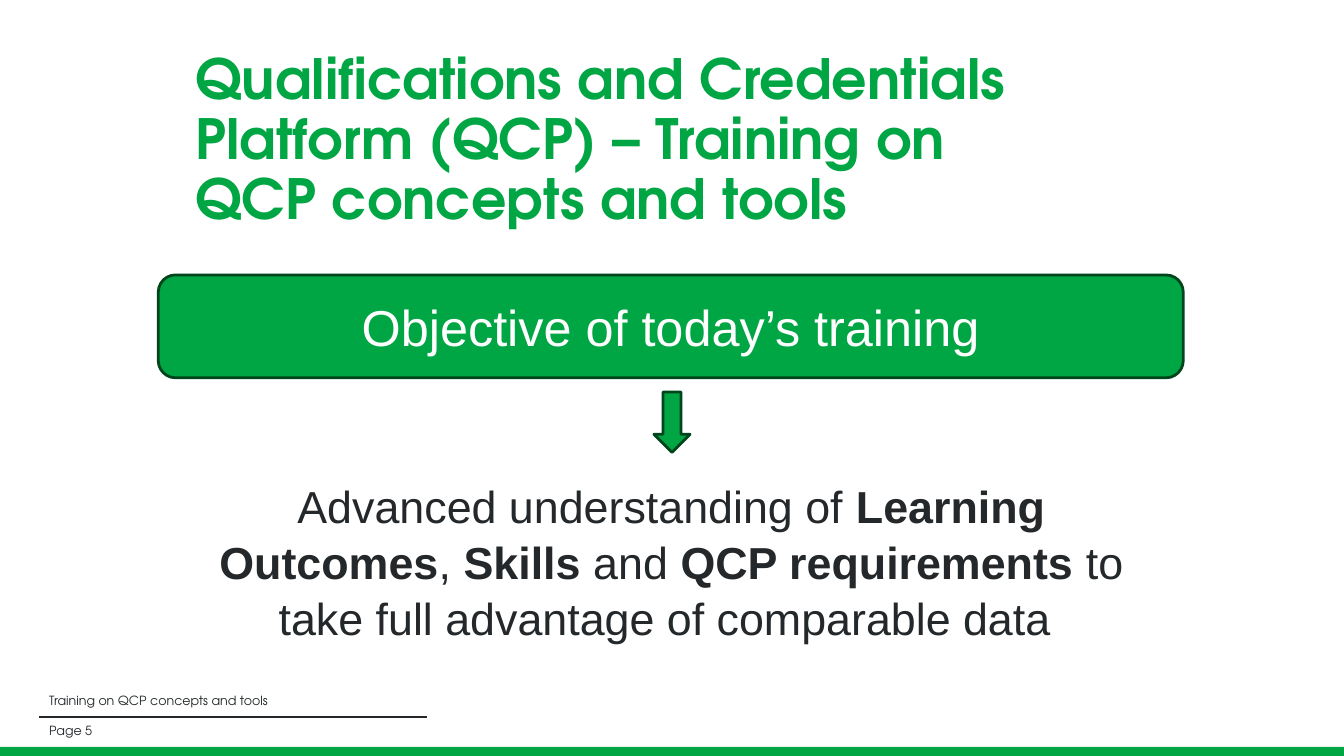
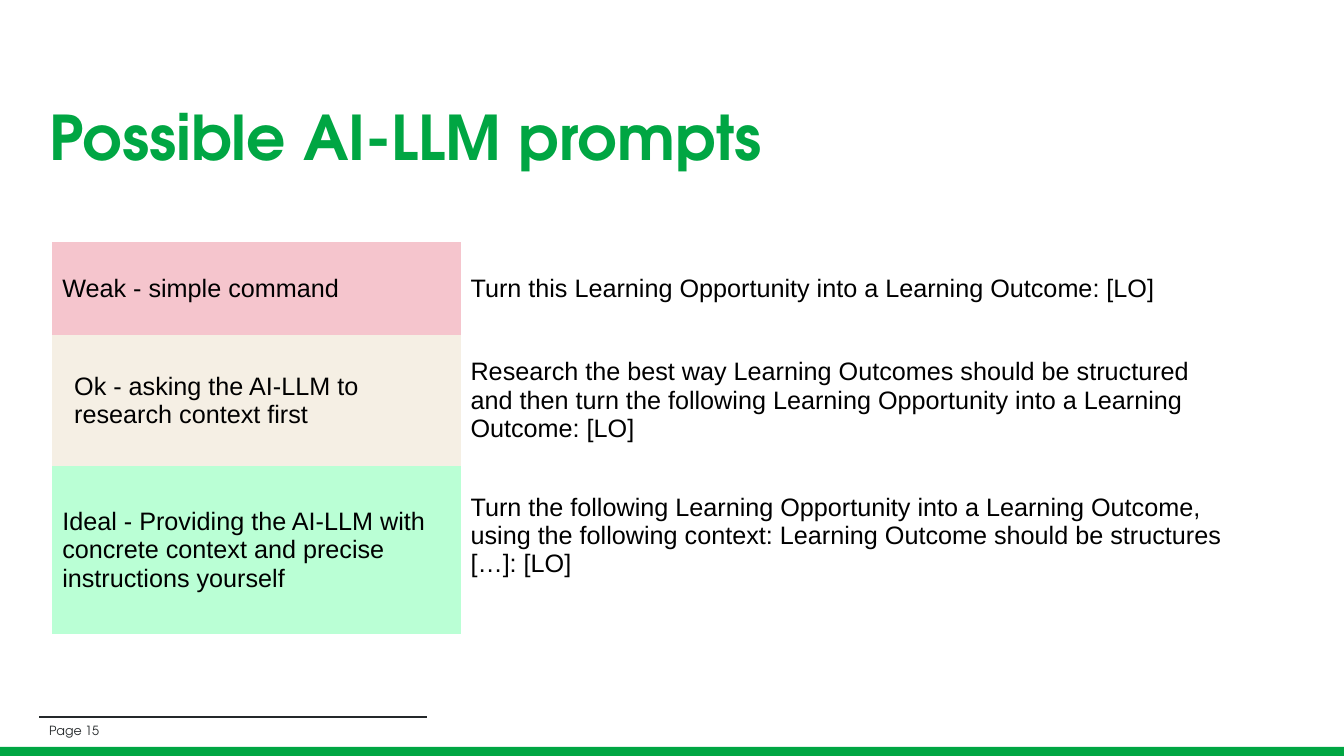
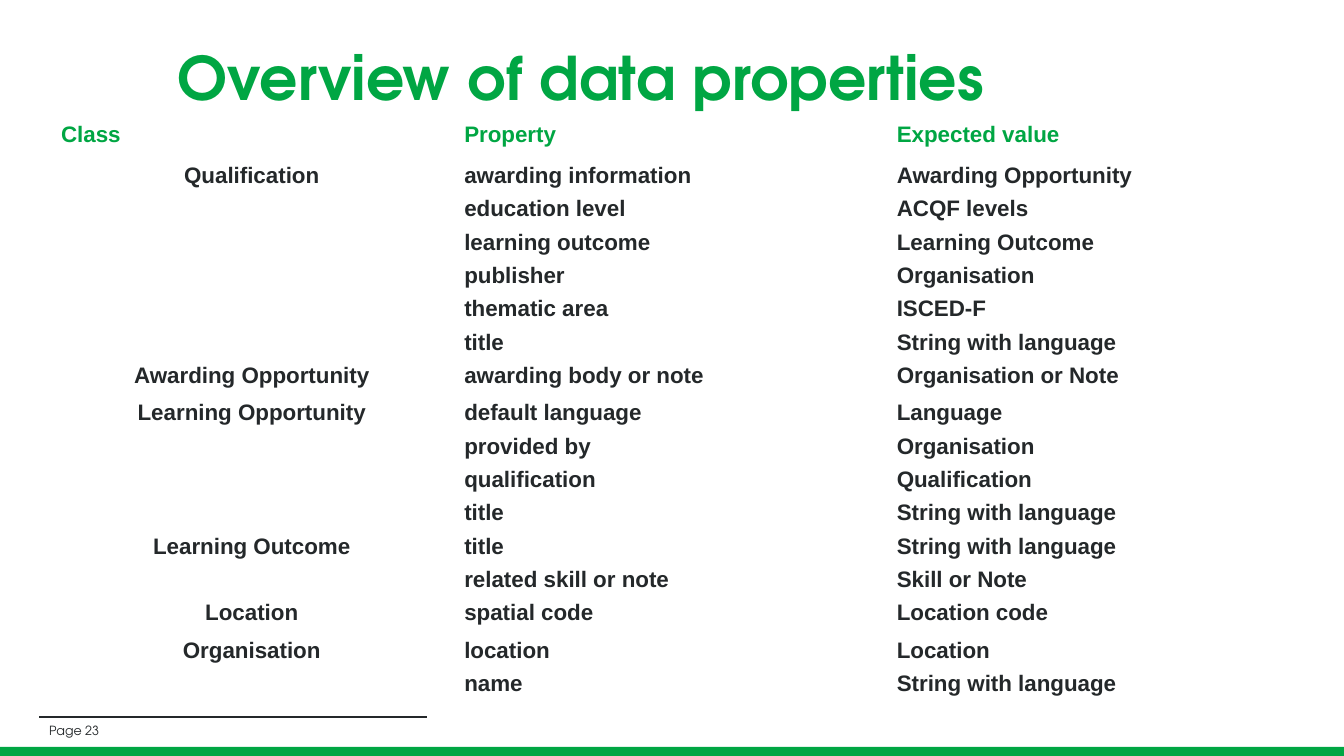
from pptx import Presentation
from pptx.dml.color import RGBColor
from pptx.enum.shapes import MSO_CONNECTOR, MSO_SHAPE
from pptx.enum.text import MSO_ANCHOR, MSO_AUTO_SIZE, PP_ALIGN
from pptx.oxml.ns import qn
from pptx.util import Cm, Pt
from lxml.etree import SubElement

GREEN = RGBColor(0x00, 0xA6, 0x43)
DARK = RGBColor(0x00, 0x46, 0x1C)
INK = RGBColor(0x24, 0x28, 0x2A)
WHITE = RGBColor(0xFF, 0xFF, 0xFF)
BLACK = RGBColor(0x00, 0x00, 0x00)
PINK = RGBColor(0xF5, 0xC5, 0xCD)
CREAM = RGBColor(0xF5, 0xEF, 0xE4)
MINT = RGBColor(0xBA, 0xFF, 0xD5)

HEAD, BODY = "TeX Gyre Adventor", "Arial"
PLAIN_GRID = "{2D5ABB26-0587-4C30-8999-92F81FD0307C}"
WIDTH, HEIGHT = 33.87, 19.05
LEFT, MIDDLE, FULL = PP_ALIGN.LEFT, PP_ALIGN.CENTER, PP_ALIGN.JUSTIFY

NOTE = {"name": HEAD, "size": Pt(9), "color": INK}
GOAL = {"name": BODY, "size": Pt(32), "color": INK}
BANNER = {"name": BODY, "size": Pt(36), "color": WHITE}
PROMPT = {"name": BODY, "size": Pt(18), "color": BLACK}
LABEL = {"name": BODY, "size": Pt(16), "color": GREEN, "bold": True}
ENTRY = {**LABEL, "color": INK}

# Title text, title box in cm, title size in points, page number
TRAINING = ("Qualifications and Credentials Platform (QCP) – "
            "Training on QCP concepts and tools",
            (4.67, 1.73, 22.02, 3.68), 39.6, 5)
PROMPTS = ("Possible AI-LLM prompts", (0.99, 1.7, 31.85, 3.68), 44, 15)
OVERVIEW = ("Overview of data properties", (4.22, 0.43, 28.55, 3.2), 42.9, 23)

# Text and whether it is bold
AIM = [
    ("Advanced understanding of ", False),
    ("Learning Outcomes", True),
    (", ", False),
    ("Skills", True),
    (" and ", False),
    ("QCP requirements ", True),
    ("to take full advantage of comparable data ", False),
]

# Row height, fill, rating, prompt, margin left of the rating, margin below the prompt
LEVELS = [
    (2.34, PINK, "Weak - simple command",
     "Turn this Learning Opportunity into a Learning Outcome: [LO]", 0.25, 0.13),
    (3.3, CREAM, "Ok - asking the AI-LLM to research context first",
     "Research the best way Learning Outcomes should be structured and then "
     "turn the following Learning Opportunity into a Learning Outcome: [LO]",
     0.55, 0.13),
    (4.24, MINT, "Ideal - Providing the AI-LLM with concrete context and "
     "precise instructions yourself",
     "Turn the following Learning Opportunity into a Learning Outcome, using "
     "the following context: Learning Outcome should be structures […]: [LO]",
     0.25, 0.84),
]

COLUMNS = ["Class", "Property", "Expected value"]
CLASSES = {
    "Qualification": [
        ("awarding information", "Awarding Opportunity"),
        ("education level", "ACQF levels"),
        ("learning outcome", "Learning Outcome"),
        ("publisher", "Organisation"),
        ("thematic area", "ISCED-F"),
        ("title", "String with language"),
    ],
    "Awarding Opportunity": [("awarding body or note", "Organisation or Note")],
    "Learning Opportunity": [
        ("default language", "Language"),
        ("provided by", "Organisation"),
        ("qualification", "Qualification"),
        ("title", "String with language"),
    ],
    "Learning Outcome": [
        ("title", "String with language"),
        ("related skill or note", "Skill or Note"),
    ],
    "Location": [("spatial code", "Location code")],
    "Organisation": [
        ("location", "Location"),
        ("name", "String with language"),
    ],
}


def cms(*values):
    return [Cm(value) for value in values]


def write(frame, parts, style, align=LEFT, lines=1.0):
    """Fill the first paragraph with (text, changes to the style) parts."""
    para = frame.paragraphs[0]
    para.alignment, para.line_spacing = align, lines
    for text, change in parts:
        run = para.add_run()
        run.text = text
        look = {**style, **change}
        run.font.color.rgb = look.pop("color")
        for name, value in look.items():
            setattr(run.font, name, value)


def set_frame(frame):
    form = {"word_wrap": True, "auto_size": MSO_AUTO_SIZE.NONE,
            "vertical_anchor": MSO_ANCHOR.MIDDLE}
    for name, value in form.items():
        setattr(frame, name, value)
    return frame


def add_text(slide, box, parts, style, **layout):
    frame = set_frame(slide.shapes.add_textbox(*cms(*box)).text_frame)
    write(frame, parts, style, **layout)


def add_shape(slide, kind, box, edge=None):
    shape = slide.shapes.add_shape(kind, *cms(*box))
    shape.shadow.inherit = False
    shape.fill.solid()
    shape.fill.fore_color.rgb = GREEN
    if edge is None:
        shape.line.fill.background()
    else:
        shape.line.color.rgb = edge
        shape.line.width = Pt(2)
    return shape


def brand(slide):
    """Draw the band and footer rule, then hand them to the slide's layout."""
    band = add_shape(slide, MSO_SHAPE.RECTANGLE,
                     (0, 18.82, WIDTH, HEIGHT - 18.82))
    rule = slide.shapes.add_connector(MSO_CONNECTOR.STRAIGHT,
                                      *cms(0.99, 18.06, 10.77, 18.06))
    rule.line.color.rgb = INK
    rule.line.width = Pt(1.5)
    SubElement(rule.element.spPr, qn("a:effectLst"))
    for part in (band, rule):
        slide.slide_layout.shapes.element.append(part.element)


def start(deck, title, box, size, page):
    slide = deck.slides.add_slide(deck.slide_layouts[5])
    head = slide.shapes.title
    head.left, head.top, head.width, head.height = cms(*box)
    style = {"name": HEAD, "size": Pt(size), "color": GREEN, "bold": True}
    write(set_frame(head.text_frame), [(title, {})], style, lines=0.9)
    add_text(slide, (0.99, 18.16, 10.31, 0.48), [(f"Page {page}", {})], NOTE)
    return slide


def add_grid(slide, left, top, widths, heights):
    frame = slide.shapes.add_table(
        len(heights), len(widths),
        *cms(left, top, sum(widths), sum(heights)))
    for style in frame.element.iter(qn("a:tableStyleId")):
        style.text = PLAIN_GRID
    table = frame.table
    table.first_row = table.horz_banding = False
    for column, width in zip(table.columns, widths):
        column.width = Cm(width)
    for row, height in zip(table.rows, heights):
        row.height = Cm(height)
    return table


def set_cell(cell, anchor, left, edge, base, fill=None):
    form = {"vertical_anchor": anchor, "margin_left": Cm(left),
            "margin_right": Cm(0.25), "margin_top": Cm(edge),
            "margin_bottom": Cm(base)}
    for name, value in form.items():
        setattr(cell, name, value)
    if fill is None:
        cell.fill.background()
    else:
        cell.fill.solid()
        cell.fill.fore_color.rgb = fill


def add_training(deck):
    slide = start(deck, *TRAINING)
    brand(slide)
    add_text(slide, (0.99, 17.42, 10.31, 0.48),
             [("Training on QCP concepts and tools", {})], NOTE)
    add_text(slide, (5.21, 11.13, 23.42, 5.99),
             [(text, {"bold": bold}) for text, bold in AIM],
             GOAL, align=MIDDLE, lines=1.04)
    bar = add_shape(slide, MSO_SHAPE.ROUNDED_RECTANGLE,
                    (3.99, 6.93, 25.83, 2.59), DARK)
    write(set_frame(bar.text_frame),
          [("Objective of today’s training", {})], BANNER, align=MIDDLE)
    add_shape(slide, MSO_SHAPE.DOWN_ARROW, (16.48, 9.88, 0.91, 1.52), DARK)


def add_prompts(deck):
    slide = start(deck, *PROMPTS)
    table = add_grid(slide, 1.32, 6.1, (10.29, 19.69),
                     [level[0] for level in LEVELS])
    for row, (_, fill, rating, prompt, left, base) in enumerate(LEVELS):
        cells = [(rating, left, 0.13, fill), (prompt, 0.25, base, None)]
        for col, (text, inset, below, paint) in enumerate(cells):
            cell = table.cell(row, col)
            set_cell(cell, MSO_ANCHOR.MIDDLE, inset, 0.13, below, paint)
            write(cell.text_frame, [(text, {})], PROMPT)


def add_overview(deck):
    slide = start(deck, *OVERVIEW)
    heights = [1.02]
    for pairs in CLASSES.values():
        heights += [0.94] if len(pairs) == 1 else [0.84] * len(pairs)
    table = add_grid(slide, 1.24, 3, (10.16, 10.9, 10.97), heights)
    for cell in table.iter_cells():
        set_cell(cell, MSO_ANCHOR.TOP, 0.3, 0, 0)

    def put(row, col, text, style=ENTRY, align=FULL):
        write(table.cell(row, col).text_frame, [(text, {})], style, align, 1.15)

    for col, text in enumerate(COLUMNS):
        put(0, col, text, LABEL)
    row = 1
    for name, pairs in CLASSES.items():
        last = row + len(pairs) - 1
        if last > row:
            table.cell(row, 0).merge(table.cell(last, 0))
        put(row, 0, name, align=MIDDLE)
        for row, pair in enumerate(pairs, row):
            for col, text in enumerate(pair, 1):
                put(row, col, text)
        row += 1


def main():
    deck = Presentation()
    deck.slide_width, deck.slide_height = cms(WIDTH, HEIGHT)
    for add in (add_training, add_prompts, add_overview):
        add(deck)
    deck.save("out.pptx")


if __name__ == "__main__":
    main()
